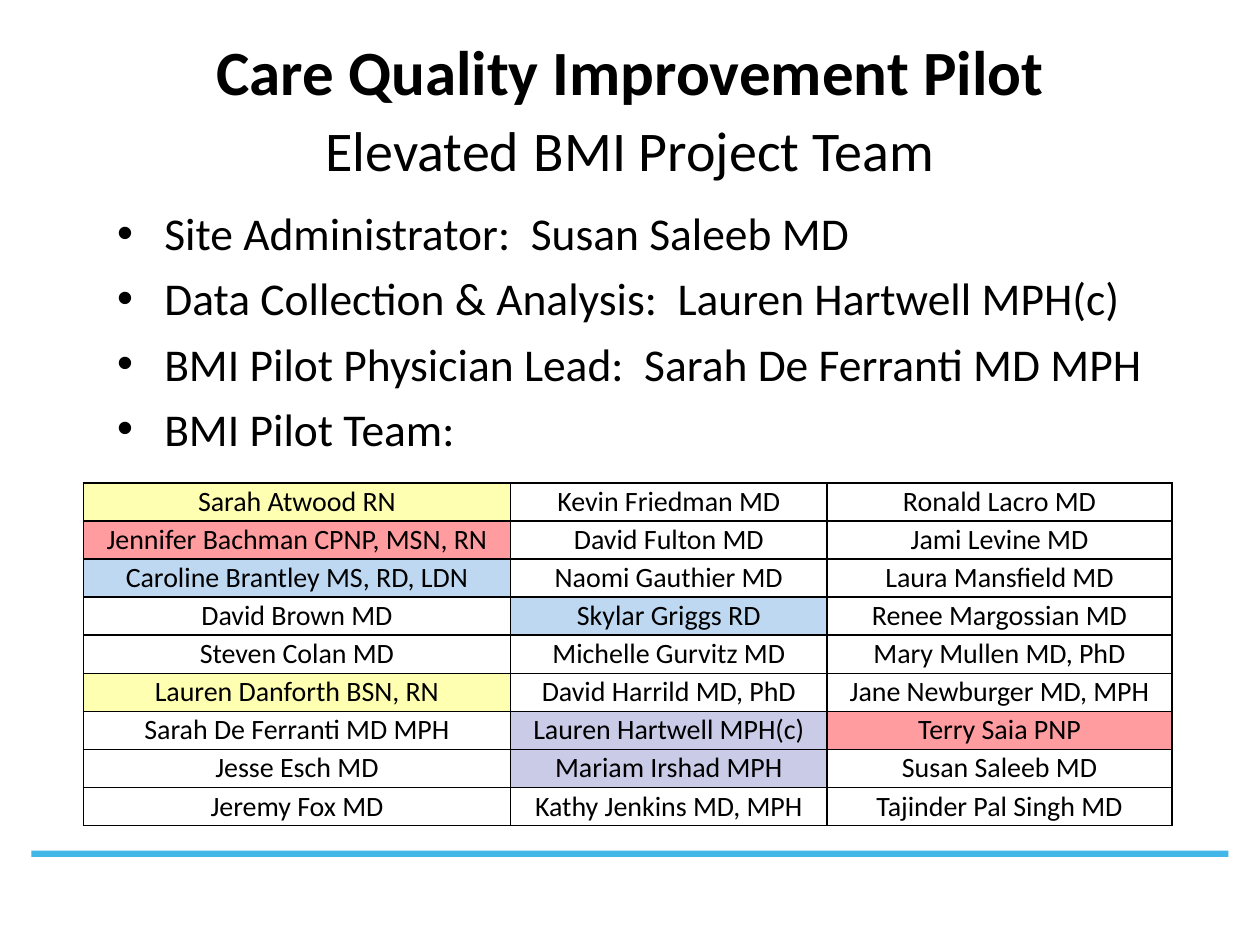
"""Build the Elevated BMI project team slide."""
from lxml.etree import SubElement
from pptx import Presentation
from pptx.dml.color import RGBColor
from pptx.enum.shapes import MSO_SHAPE
from pptx.enum.text import MSO_ANCHOR, MSO_AUTO_SIZE, PP_ALIGN
from pptx.oxml import parse_xml
from pptx.oxml.ns import nsdecls, qn
from pptx.util import Pt

BLACK = RGBColor(0x00, 0x00, 0x00)
BLUE = RGBColor(0x41, 0xB6, 0xE7)
YELLOW = RGBColor(0xFF, 0xFF, 0x99)
RED = RGBColor(0xFF, 0x7C, 0x80)
SKY = RGBColor(0xA9, 0xCC, 0xEE)
LILAC = RGBColor(0xC9, 0xCB, 0xE7)

TITLE = [
    ("Care Quality Improvement Pilot", 36, True),
    None,
    ("Elevated", 32, False),
    (" ", 36, True),
    ("BMI Project Team", 32, False),
]
ROLES = [
    "Site Administrator:  Susan Saleeb MD",
    "Data Collection & Analysis:  Lauren Hartwell MPH(c)",
    "BMI Pilot Physician Lead:  Sarah De Ferranti MD MPH",
    "BMI Pilot Team:",
]
TEAM = [
    ("Sarah Atwood RN", "Kevin Friedman MD", "Ronald Lacro MD"),
    ("Jennifer Bachman CPNP, MSN, RN", "David Fulton MD", "Jami Levine MD"),
    ("Caroline Brantley MS, RD, LDN", "Naomi Gauthier MD", "Laura Mansfield MD"),
    ("David Brown MD", "Skylar Griggs RD", "Renee Margossian MD"),
    ("Steven Colan MD", "Michelle Gurvitz MD", "Mary Mullen MD, PhD"),
    ("Lauren Danforth BSN, RN", "David Harrild MD, PhD", "Jane Newburger MD, MPH"),
    ("Sarah De Ferranti MD MPH", "Lauren Hartwell MPH(c)", "Terry Saia PNP"),
    ("Jesse Esch MD", "Mariam Irshad MPH", "Susan Saleeb MD"),
    ("Jeremy Fox MD", "Kathy Jenkins MD, MPH", "Tajinder Pal Singh MD"),
]
FILLS = {
    (0, 0): YELLOW, (5, 0): YELLOW,
    (1, 0): RED, (6, 2): RED,
    (2, 0): SKY, (3, 1): SKY,
    (6, 1): LILAC, (7, 1): LILAC,
}
WIDTHS = [244, 181, 197]
ROW = 21.75


def add_run(para, text, size, bold=False):
    run = para.add_run()
    run.text = text
    font = run.font
    font.name, font.size, font.bold = "Calibri", Pt(size), bold
    font.color.rgb = BLACK


deck = Presentation()
deck.slide_width, deck.slide_height = Pt(720), Pt(540)
slide = deck.slides.add_slide(deck.slide_layouts[5])
shapes = slide.shapes

bar = shapes.add_shape(MSO_SHAPE.RECTANGLE, Pt(18), Pt(486), Pt(684), Pt(3.6))
bar.shadow.inherit = False
bar.fill.solid()
bar.fill.fore_color.rgb = BLUE
bar.line.fill.background()

title = shapes.title
title.left, title.top, title.width, title.height = Pt(36), Pt(21.6), Pt(648), Pt(80.6)
frame = title.text_frame
frame.auto_size = MSO_AUTO_SIZE.NONE
frame.vertical_anchor = MSO_ANCHOR.MIDDLE
para = frame.paragraphs[0]
para.alignment = PP_ALIGN.CENTER
para.space_after = Pt(6)
for part in TITLE:
    if part:
        add_run(para, *part)
    else:
        para.add_line_break()

body = shapes.add_textbox(Pt(59.8), Pt(113.8), Pt(624.2), Pt(342))
frame = body.text_frame
frame.word_wrap = True
for i, role in enumerate(ROLES):
    para = frame.add_paragraph() if i else frame.paragraphs[0]
    props = para._p.get_or_add_pPr()
    props.set("marL", str(Pt(27)))
    props.set("indent", str(-Pt(27)))
    SubElement(props, qn("a:buFont"), typeface="Arial")
    SubElement(props, qn("a:buChar"), char="•")
    para.space_after = Pt(6)
    add_run(para, role, 26)

grid = shapes.add_table(
    len(TEAM), len(WIDTHS), Pt(47.7), Pt(276), Pt(sum(WIDTHS)), Pt(ROW * len(TEAM))
).table
grid.first_row = grid.horz_banding = False
for col, width in zip(grid.columns, WIDTHS):
    col.width = Pt(width)
for r, names in enumerate(TEAM):
    grid.rows[r].height = Pt(ROW)
    for c, name in enumerate(names):
        cell = grid.cell(r, c)
        cell.margin_left = cell.margin_right = Pt(10.8)
        cell.margin_top = cell.margin_bottom = 0
        cell.vertical_anchor = MSO_ANCHOR.MIDDLE
        para = cell.text_frame.paragraphs[0]
        para.alignment = PP_ALIGN.CENTER
        add_run(para, name, 16)
        props = cell._tc.get_or_add_tcPr()
        for side in "LRTB":
            props.append(parse_xml(
                f'<a:ln{side} {nsdecls("a")} w="{Pt(1)}"><a:solidFill>'
                f'<a:srgbClr val="{BLACK}"/></a:solidFill></a:ln{side}>'
            ))
        tint = FILLS.get((r, c))
        if tint is None:
            cell.fill.background()
            continue
        cell.fill.solid()
        cell.fill.fore_color.rgb = tint
        if tint != LILAC:
            shade = props.find(qn("a:solidFill")).find(qn("a:srgbClr"))
            SubElement(shade, qn("a:alpha"), val="75000")

deck.save("out.pptx")
